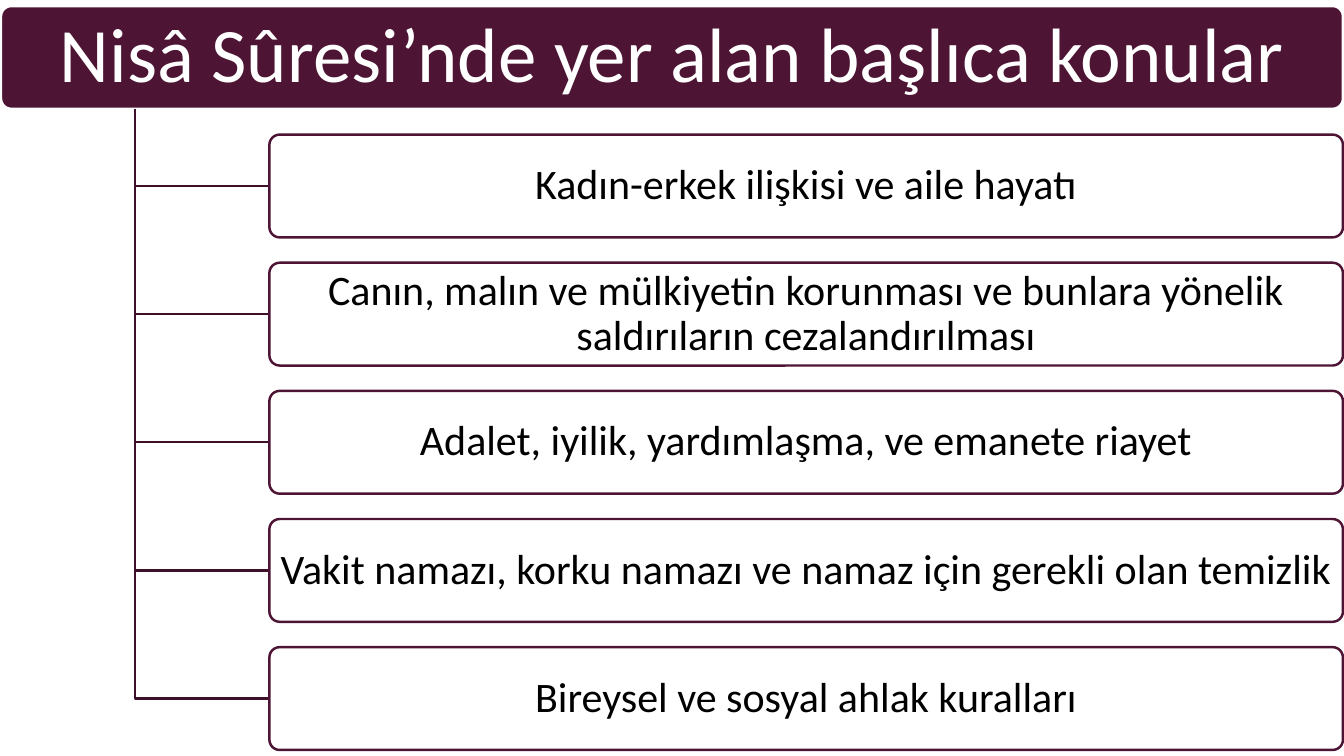
from lxml.etree import SubElement
from pptx import Presentation
from pptx.dml.color import RGBColor
from pptx.enum.shapes import MSO_SHAPE
from pptx.enum.text import MSO_ANCHOR, PP_ALIGN
from pptx.oxml.ns import qn
from pptx.util import Inches, Pt

PLUM, DARK_PLUM, WHITE, BLACK = "4D1434", "3E102A", "FFFFFF", "000000"
LINE_WIDTH = Pt(1.75)
BAR_HEIGHT = 1.02

HEADING = "Nisâ Sûresi’nde yer alan başlıca konular"
TOPICS = [
    "Kadın-erkek ilişkisi ve aile hayatı",
    "Canın, malın ve mülkiyetin korunması ve bunlara yönelik saldırıların cezalandırılması",
    "Adalet, iyilik, yardımlaşma, ve emanete riayet",
    "Vakit namazı, korku namazı ve namaz için gerekli olan temizlik",
    "Bireysel ve sosyal ahlak kuralları",
]


def color(hex_code):
    return RGBColor.from_string(hex_code)


def set_line(shape, hex_code):
    shape.line.color.rgb = color(hex_code)
    shape.line.width = LINE_WIDTH
    shape.shadow.inherit = False


def add_bar(slide, box, text, size, fill, line, ink, margins):
    """Add a rounded bar with centred text; margins are (side, top and bottom)."""
    bar = slide.shapes.add_shape(MSO_SHAPE.ROUNDED_RECTANGLE, *map(Inches, box))
    bar.adjustments[0] = 0.1
    bar.fill.solid()
    bar.fill.fore_color.rgb = color(fill)
    set_line(bar, line)

    frame = bar.text_frame
    frame.word_wrap = True
    frame.vertical_anchor = MSO_ANCHOR.MIDDLE
    frame.margin_left = frame.margin_right = Inches(margins[0])
    frame.margin_top = frame.margin_bottom = Inches(margins[1])
    frame.text = text
    paragraph = frame.paragraphs[0]
    paragraph.alignment = PP_ALIGN.CENTER
    paragraph.line_spacing = 0.9
    font = paragraph.runs[0].font
    font.name, font.size = "Calibri", Pt(size)
    font.color.rgb = color(ink)
    return bar


def add_branch(slide, trunk_x, trunk_y, end_x, end_y):
    """Add an elbow line that runs down the trunk, then right to a topic."""
    builder = slide.shapes.build_freeform(Inches(trunk_x), Inches(trunk_y))
    corner_and_end = [(trunk_x, end_y), (end_x, end_y)]
    builder.add_line_segments(
        [(Inches(x), Inches(y)) for x, y in corner_and_end], close=False)
    branch = builder.convert_to_shape()
    branch.fill.background()
    set_line(branch, DARK_PLUM)


def add_topics(slide, box, topics, trunk_x, trunk_y):
    """Spread the topics evenly down the box, each joined to the trunk."""
    left, top, width, height = box
    pitch = (height - BAR_HEIGHT) / (len(topics) - 1)
    for index, topic in enumerate(topics):
        topic_top = top + index * pitch
        add_branch(slide, trunk_x, trunk_y, left, topic_top + BAR_HEIGHT / 2)
        bar = add_bar(slide, (left, topic_top, width, BAR_HEIGHT), topic, 30,
                      WHITE, PLUM, BLACK, (0.05, 0.04))
        fill_color = bar.fill._xPr.find(qn("a:solidFill"))[0]
        SubElement(fill_color, qn("a:alpha"), val="90000")


def add_hierarchy(slide, box):
    """Add the heading across the box and the topics indented below it."""
    left, top, width, height = box
    indent = width / 5
    add_bar(slide, (left, top, width, BAR_HEIGHT), HEADING, 55,
            PLUM, WHITE, WHITE, (0.11, 0.08))
    topics_top = top + BAR_HEIGHT * 1.25
    topics_box = (left + indent, topics_top, width - indent,
                  top + height - topics_top)
    add_topics(slide, topics_box, TOPICS, left + indent / 2, top + BAR_HEIGHT)


def main():
    presentation = Presentation()
    presentation.slide_width = Inches(13.33)
    presentation.slide_height = Inches(7.5)
    slide = presentation.slides.add_slide(presentation.slide_layouts[6])
    add_hierarchy(slide, (0.01, 0.06, 13.31, 7.38))
    presentation.save("out.pptx")


if __name__ == "__main__":
    main()
